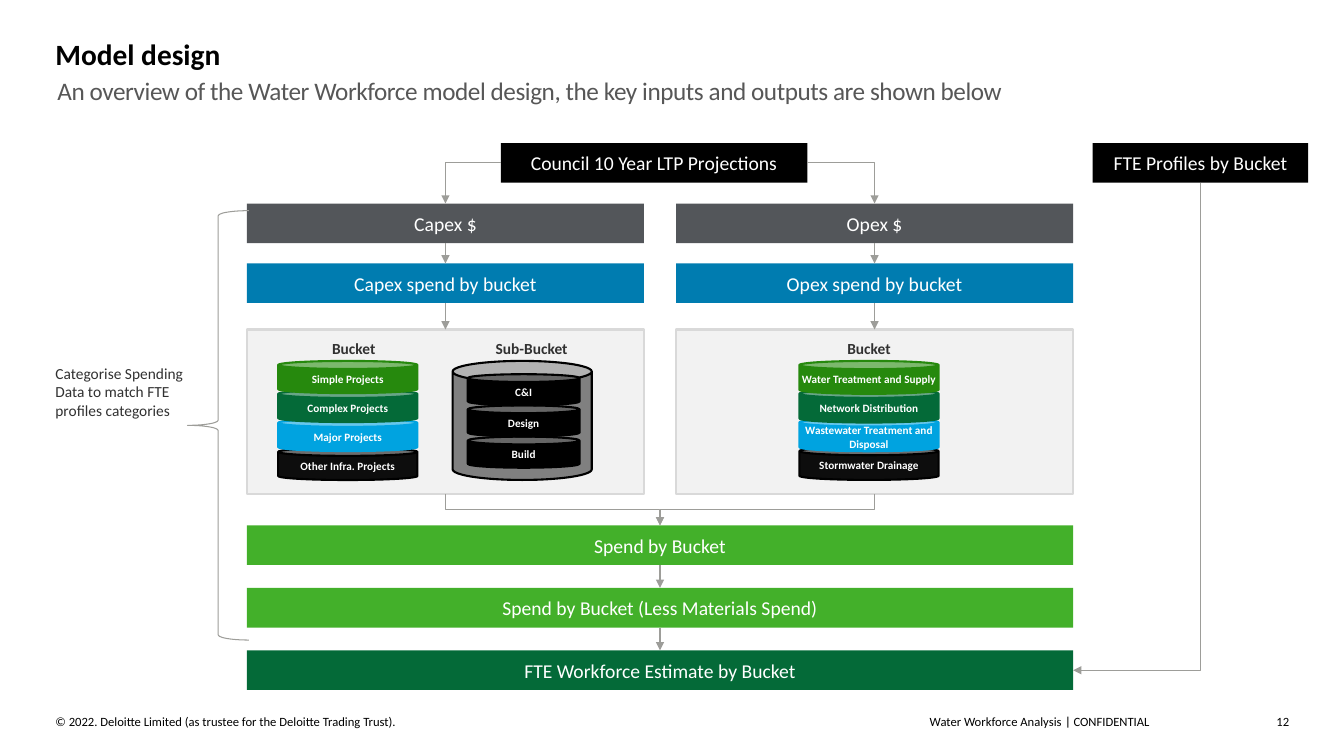
"""Build the Model design slide of the Water Workforce Analysis deck."""
from dataclasses import dataclass
from typing import Optional

from lxml import etree
from pptx import Presentation
from pptx.dml.color import RGBColor
from pptx.enum.shapes import MSO_CONNECTOR, MSO_SHAPE
from pptx.enum.text import MSO_ANCHOR, PP_ALIGN
from pptx.oxml.ns import qn
from pptx.shapes.autoshape import Shape
from pptx.shapes.connector import Connector
from pptx.slide import Slide
from pptx.text.text import TextFrame
from pptx.util import Pt

RECT, CAN, BRACE = MSO_SHAPE.RECTANGLE, MSO_SHAPE.CAN, MSO_SHAPE.LEFT_BRACE
STRAIGHT, ELBOW = MSO_CONNECTOR.STRAIGHT, MSO_CONNECTOR.ELBOW
LEFT, CENTER, RIGHT = PP_ALIGN.LEFT, PP_ALIGN.CENTER, PP_ALIGN.RIGHT
TOP, MIDDLE = MSO_ANCHOR.TOP, MSO_ANCHOR.MIDDLE

BLACK = RGBColor(0x00, 0x00, 0x00)
WHITE = RGBColor(0xFF, 0xFF, 0xFF)
INK = RGBColor(0x31, 0x31, 0x31)
SUBTITLE_GREY = RGBColor(0x57, 0x57, 0x57)
SLATE = RGBColor(0x53, 0x56, 0x5A)
ARROW_GREY = RGBColor(0x9D, 0x9D, 0x99)
PANEL_FILL = RGBColor(0xF2, 0xF2, 0xF2)
PANEL_EDGE = RGBColor(0xD9, 0xD9, 0xD9)
CAN_GREY = RGBColor(0x80, 0x80, 0x80)
NEAR_BLACK = RGBColor(0x0D, 0x0D, 0x0D)
BLUE = RGBColor(0x00, 0x7C, 0xB0)
SKY = RGBColor(0x00, 0xA3, 0xE0)
GREEN = RGBColor(0x43, 0xB0, 0x2A)
LEAF = RGBColor(0x26, 0x89, 0x0D)
FOREST = RGBColor(0x04, 0x6A, 0x38)

NO_MARGINS = {"margin_left": 0, "margin_right": 0, "margin_top": 0, "margin_bottom": 0}

CAPEX_X, OPEX_X, COLUMN_W = 176.4, 482.9, 283.6
FULL_W = OPEX_X + COLUMN_W - CAPEX_X
CAPEX_MID, OPEX_MID = CAPEX_X + COLUMN_W / 2, OPEX_X + COLUMN_W / 2
FULL_MID = CAPEX_X + FULL_W / 2
BAR_H = 28.3
INPUT_Y, SPEND_Y, SPLIT_Y = 102.2, 145.4, 188.2
PANEL_Y, PANEL_H = 235.4, 117.4
PANEL_END = PANEL_Y + PANEL_H
TOTAL_Y, LESS_Y, FTE_Y = 375.3, 420, 464.6
COUNCIL_X, COUNCIL_W = 357.8, 218.9
PROFILES_X, PROFILES_W = 780.5, 154
CAN_Y, CAN_W = 257.8, 99.4


@dataclass(frozen=True)
class Bar:
    text: str
    x: float
    y: float
    width: float
    color: RGBColor


@dataclass(frozen=True)
class Label:
    text: str
    x: float
    y: float
    width: float
    height: float
    size: float
    color: RGBColor = BLACK
    bold: bool = False
    align: PP_ALIGN = LEFT
    spacing: Optional[str] = None


@dataclass(frozen=True)
class CanStack:
    x: float
    y: float
    width: float
    height: float
    step: float
    names: tuple[str, ...]
    colors: tuple[tuple[RGBColor, RGBColor], ...]


BARS = (
    Bar("FTE Profiles by Bucket", PROFILES_X, INPUT_Y, PROFILES_W, BLACK),
    Bar("Council 10 Year LTP Projections", COUNCIL_X, INPUT_Y, COUNCIL_W, BLACK),
    Bar("Capex $", CAPEX_X, SPEND_Y, COLUMN_W, SLATE),
    Bar("Opex $", OPEX_X, SPEND_Y, COLUMN_W, SLATE),
    Bar("Capex spend by bucket", CAPEX_X, SPLIT_Y, COLUMN_W, BLUE),
    Bar("Opex spend by bucket", OPEX_X, SPLIT_Y, COLUMN_W, BLUE),
    Bar("Spend by Bucket", CAPEX_X, TOTAL_Y, FULL_W, GREEN),
    Bar("Spend by Bucket (Less Materials Spend)", CAPEX_X, LESS_Y, FULL_W, GREEN),
    Bar("FTE Workforce Estimate by Bucket", CAPEX_X, FTE_Y, FULL_W, FOREST),
)

LABELS = (
    Label("Model design", 39.6, 25.8, 881, 26, 21, bold=True),
    Label("An overview of the Water Workforce model design, the key inputs and outputs are shown below",
          41, 54, 890, 24, 18, SUBTITLE_GREY, spacing="-30"),
    Label("Categorise Spending Data to match FTE profiles categories", 39.6, 260, 112.3, 40.3, 11, INK),
    Label("Bucket", 203, 242, CAN_W, 13.7, 11, INK, True, CENTER),
    Label("Sub-Bucket", 330, 242, CAN_W, 13.7, 11, INK, True, CENTER),
    Label("Bucket", 571, 242, CAN_W, 13.7, 11, INK, True, CENTER),
    Label("© 2022. Deloitte Limited (as trustee for the Deloitte Trading Trust).", 39.6, 510, 422, 11.5, 9),
    Label("Water Workforce Analysis", 608.4, 510, 149.8, 11.5, 9, align=RIGHT),
    Label("CONFIDENTIAL", 766.8, 510, 121.7, 11.5, 9),
    Label("12", 896.4, 510, 24.5, 11.5, 9, align=RIGHT),
)

BUCKET_COLORS = ((LEAF, LEAF), (FOREST, FOREST), (SKY, SKY), (NEAR_BLACK, BLACK))
STACKS = (
    CanStack(198.7, CAN_Y, CAN_W, 23, 20.7,
             ("Simple Projects", "Complex Projects", "Major Projects", "Other Infra. Projects"), BUCKET_COLORS),
    CanStack(334.1, 267.3, 79.9, 22.2, 22.3, ("C&I", "Design", "Build"), ((BLACK, BLACK),) * 3),
    CanStack(571, CAN_Y, CAN_W, 23.5, 20.5,
             ("Water Treatment and Supply", "Network Distribution", "Wastewater Treatment and Disposal",
              "Stormwater Drainage"), BUCKET_COLORS),
)

STRAIGHT_ARROWS = tuple(
    (middle, start, end)
    for middle in (CAPEX_MID, OPEX_MID)
    for start, end in ((SPEND_Y + BAR_H, SPLIT_Y), (SPLIT_Y + BAR_H, PANEL_Y))
) + ((FULL_MID, TOTAL_Y + BAR_H, LESS_Y), (FULL_MID, LESS_Y + BAR_H, FTE_Y))


def write_text(frame: TextFrame, text: str, size: float, color: RGBColor, bold: bool = False,
               align: PP_ALIGN = CENTER, anchor: MSO_ANCHOR = MIDDLE) -> None:
    """Put one formatted paragraph into a frame."""
    frame.word_wrap, frame.vertical_anchor = True, anchor
    paragraph = frame.paragraphs[0]
    paragraph.alignment = align
    run = paragraph.add_run()
    run.text = text
    for key, value in {"name": "Calibri", "size": Pt(size), "bold": bold}.items():
        setattr(run.font, key, value)
    run.font.color.rgb = color


def clear_margins(frame: TextFrame) -> None:
    """Remove the inner margins of a frame."""
    for key, value in NO_MARGINS.items():
        setattr(frame, key, value)


def draw_shape(slide: Slide, kind: MSO_SHAPE, x: float, y: float, width: float, height: float,
               fill: Optional[RGBColor], edge: Optional[RGBColor] = None, weight: float = 1.5) -> Shape:
    """Draw a preset shape without shadow."""
    shape = slide.shapes.add_shape(kind, Pt(x), Pt(y), Pt(width), Pt(height))
    shape.shadow.inherit = False
    for part, color in ((shape.fill, fill), (shape.line.fill, edge)):
        if color is None:
            part.background()
        else:
            part.solid()
            part.fore_color.rgb = color
    if edge is not None:
        shape.line.width = Pt(weight)
    return shape


def draw_label(slide: Slide, label: Label) -> None:
    """Draw a text box."""
    frame = slide.shapes.add_textbox(Pt(label.x), Pt(label.y), Pt(label.width), Pt(label.height)).text_frame
    clear_margins(frame)
    write_text(frame, label.text, label.size, label.color, label.bold, label.align, TOP)
    if label.spacing:
        frame.paragraphs[0].runs[0].font._element.set("spc", label.spacing)


def draw_stack(slide: Slide, stack: CanStack) -> None:
    """Draw labelled cans from the bottom of the stack up."""
    for level in reversed(range(len(stack.names))):
        can = draw_shape(slide, CAN, stack.x, stack.y + level * stack.step, stack.width, stack.height,
                         *stack.colors[level])
        clear_margins(can.text_frame)
        write_text(can.text_frame, stack.names[level], 8, WHITE, True)


def draw_arrow(slide: Slide, x1: float, y1: float, x2: float, y2: float,
               kind: MSO_CONNECTOR = STRAIGHT) -> Connector:
    """Draw a grey connector with an arrowhead at its end."""
    arrow = slide.shapes.add_connector(kind, Pt(x1), Pt(y1), Pt(x2), Pt(y2))
    arrow.line.color.rgb, arrow.line.width = ARROW_GREY, Pt(0.75)
    properties = arrow._element.spPr
    etree.SubElement(properties.find(qn("a:ln")), qn("a:tailEnd"), type="triangle")
    etree.SubElement(properties, qn("a:effectLst"))
    return arrow


def draw_elbow(slide: Slide, x1: float, y1: float, x2: float, y2: float,
               preset: str, vertical_first: bool) -> None:
    """Draw a bent arrow, turned a quarter when it leaves vertically."""
    if vertical_first:
        mid_x, mid_y, run, rise = (x1 + x2) / 2, (y1 + y2) / 2, y2 - y1, x1 - x2
        x1, x2, y1, y2 = mid_x - run / 2, mid_x + run / 2, mid_y - rise / 2, mid_y + rise / 2
    properties = draw_arrow(slide, x1, y1, x2, y2, ELBOW)._element.spPr
    properties.find(qn("a:prstGeom")).set("prst", preset)
    if vertical_first:
        properties.find(qn("a:xfrm")).set("rot", "5400000")


def main() -> None:
    """Assemble and save the slide."""
    deck = Presentation()
    deck.slide_width, deck.slide_height = Pt(960), Pt(540)
    slide = deck.slides.add_slide(deck.slide_layouts[6])
    for x in (CAPEX_X, OPEX_X):
        draw_shape(slide, RECT, x, PANEL_Y, COLUMN_W, PANEL_H, PANEL_FILL, PANEL_EDGE)
    for bar in BARS:
        box = draw_shape(slide, RECT, bar.x, bar.y, bar.width, BAR_H, bar.color)
        write_text(box.text_frame, bar.text, 14, WHITE)
    for middle, start, end in STRAIGHT_ARROWS:
        draw_arrow(slide, middle, start, middle, end)
    for edge, middle in ((COUNCIL_X, CAPEX_MID), (COUNCIL_X + COUNCIL_W, OPEX_MID)):
        draw_elbow(slide, edge, INPUT_Y + BAR_H / 2, middle, SPEND_Y, "bentConnector2", False)
        draw_elbow(slide, middle, PANEL_END, FULL_MID, TOTAL_Y, "bentConnector3", True)
    draw_elbow(slide, PROFILES_X + PROFILES_W / 2, INPUT_Y + BAR_H, CAPEX_X + FULL_W, FTE_Y + BAR_H / 2,
               "bentConnector2", True)
    draw_shape(slide, BRACE, 133.9, 150.5, 43.9, 306.7, None, ARROW_GREY, 0.75)
    sub_bucket = draw_shape(slide, CAN, 323.3, CAN_Y, CAN_W, 85, CAN_GREY, BLACK)
    sub_bucket.adjustments[0] = 0.178
    for stack in STACKS:
        draw_stack(slide, stack)
    for label in LABELS:
        draw_label(slide, label)
    draw_shape(slide, RECT, 762.5, 511.9, 0.7, 7.9, BLACK)
    deck.save("out.pptx")


if __name__ == "__main__":
    main()
